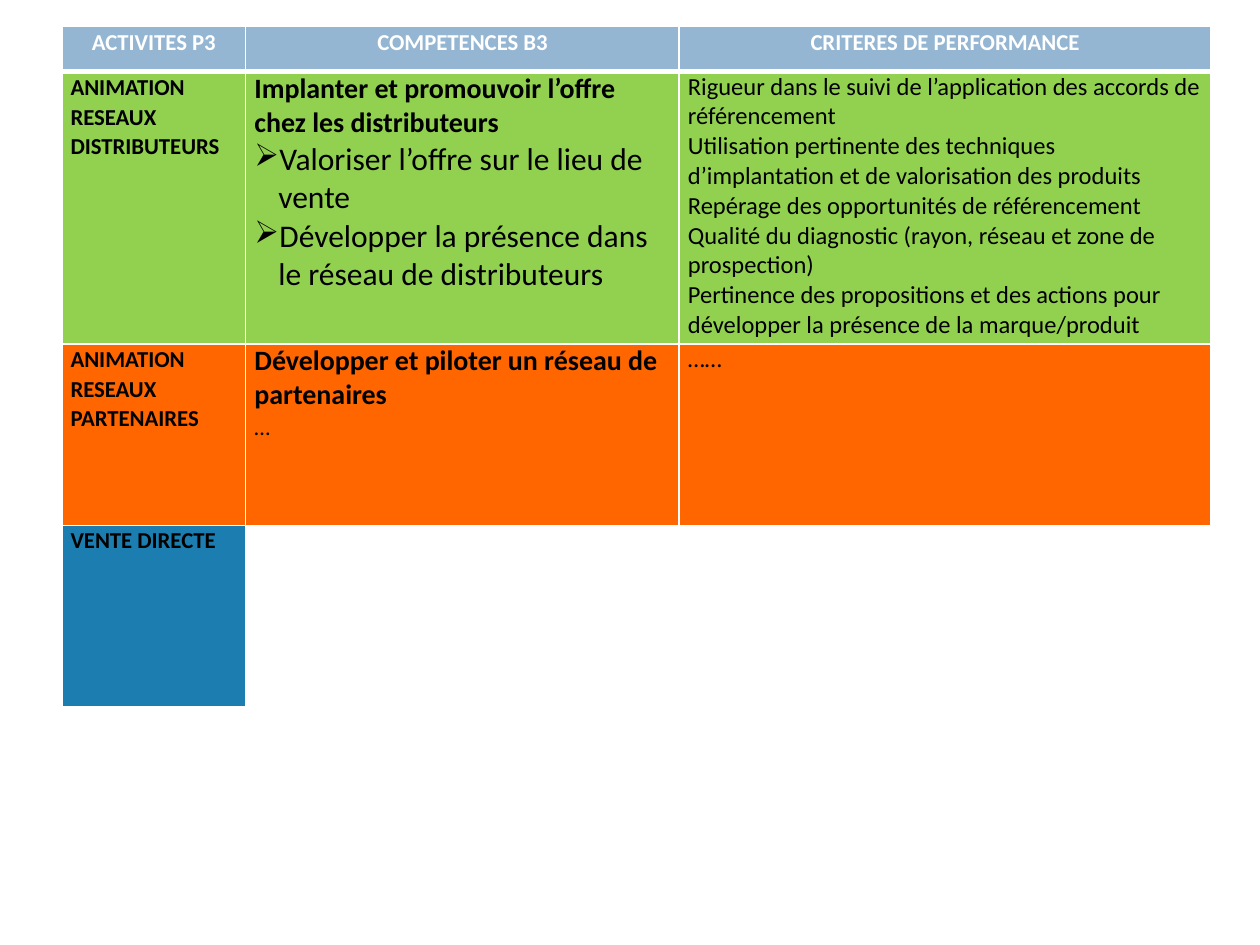
"""Build the slide with the table of activities, skills and performance criteria."""
from lxml import etree
from pptx import Presentation
from pptx import util as u
from pptx.dml.color import RGBColor
from pptx.enum import text
from pptx.oxml import ns

FONT = "Calibri"
WHITE, BLACK = "FFFFFF", "000000"
BLUE_GREY, GREEN, ORANGE, BLUE = "94B6D2", "92D050", "FF6600", "1C7EB0"
COLUMN_WIDTHS = [1.46, 3.44, 4.22]
ROW_HEIGHTS = [0.36, 2.16, 1.44, 1.44]
BULLET_INDENT = 0.19

STYLES = {
    "header": dict(size=13, bold=True, color=WHITE, spacing=1.07, align=text.PP_ALIGN.CENTER),
    "activity": dict(size=13, bold=True, spacing=1.07),
    "skill": dict(size=16, bold=True),
    "bullet": dict(size=18, bullet="➢"),
    "rest": dict(size=13, spacing=1.07),
    "criterion": dict(size=14),
}

ROWS = [
    (BLUE_GREY, [
        [("header", "ACTIVITES P3")],
        [("header", "COMPETENCES B3")],
        [("header", "CRITERES DE PERFORMANCE")],
    ]),
    (GREEN, [
        [("activity", "ANIMATION RESEAUX DISTRIBUTEURS")],
        [("skill", "Implanter et promouvoir l’offre chez les distributeurs"),
         ("bullet", "Valoriser l’offre sur le lieu de vente"),
         ("bullet", "Développer la présence dans le réseau de distributeurs")],
        [("criterion", "Rigueur dans le suivi de l’application des accords de référencement"),
         ("criterion", "Utilisation pertinente des techniques d’implantation et de valorisation des produits"),
         ("criterion", "Repérage des opportunités de référencement"),
         ("criterion", "Qualité du diagnostic (rayon, réseau et zone de prospection)"),
         ("criterion", "Pertinence des propositions et des actions pour développer "
                       "la présence de la marque/produit")],
    ]),
    (ORANGE, [
        [("activity", "ANIMATION RESEAUX PARTENAIRES")],
        [("skill", "Développer et piloter un réseau de partenaires"), ("rest", "…")],
        [("criterion", "……")],
    ]),
    (BLUE, [[("activity", "VENTE DIRECTE")], [], []]),
]


def rgb(value):
    return RGBColor.from_string(value)


def write_paragraph(paragraph, words, size, bold=False, color=BLACK, spacing=1.0,
                    align=text.PP_ALIGN.LEFT, bullet=None):
    paragraph.text = words
    paragraph.alignment = align
    paragraph.line_spacing = spacing
    if bullet:
        properties = paragraph._p.get_or_add_pPr()
        properties.set("marL", str(u.Inches(BULLET_INDENT)))
        properties.set("indent", str(u.Inches(-BULLET_INDENT)))
        etree.SubElement(properties, ns.qn("a:buChar"), char=bullet)
    font = paragraph.font
    font.name, font.size, font.bold = FONT, u.Pt(size), bold
    font.color.rgb = rgb(color)


def draw_borders(cell, bottom_width):
    properties = cell._tc.get_or_add_tcPr()
    for side, width in (("L", 1), ("R", 1), ("T", 1), ("B", bottom_width)):
        line = etree.SubElement(properties, ns.qn(f"a:ln{side}"), w=str(u.Pt(width)))
        fill = etree.SubElement(line, ns.qn("a:solidFill"))
        etree.SubElement(fill, ns.qn("a:srgbClr"), val=WHITE)


def fill_cell(cell, color, paragraphs, bottom_width):
    cell.margin_left = cell.margin_right = u.Inches(0.07)
    cell.margin_top = cell.margin_bottom = 0
    draw_borders(cell, bottom_width)
    if not paragraphs:
        cell.fill.background()
        return
    cell.fill.solid()
    cell.fill.fore_color.rgb = rgb(color)
    frame = cell.text_frame
    for index, (style, words) in enumerate(paragraphs):
        paragraph = frame.add_paragraph() if index else frame.paragraphs[0]
        write_paragraph(paragraph, words, **STYLES[style])


def main():
    presentation = Presentation()
    presentation.slide_width, presentation.slide_height = u.Inches(10), u.Inches(7.5)
    slide = presentation.slides.add_slide(presentation.slide_layouts[6])
    table = slide.shapes.add_table(
        len(ROW_HEIGHTS), len(COLUMN_WIDTHS), u.Inches(0.49), u.Inches(0.21),
        u.Inches(sum(COLUMN_WIDTHS)), u.Inches(sum(ROW_HEIGHTS))).table
    table.first_row = table.horz_banding = False
    for column, width in zip(table.columns, COLUMN_WIDTHS):
        column.width = u.Inches(width)
    for index, (row, height, (color, cells)) in enumerate(zip(table.rows, ROW_HEIGHTS, ROWS)):
        row.height = u.Inches(height)
        for cell, paragraphs in zip(row.cells, cells):
            fill_cell(cell, color, paragraphs, 1 if index else 3)
    presentation.save("out.pptx")


if __name__ == "__main__":
    main()
